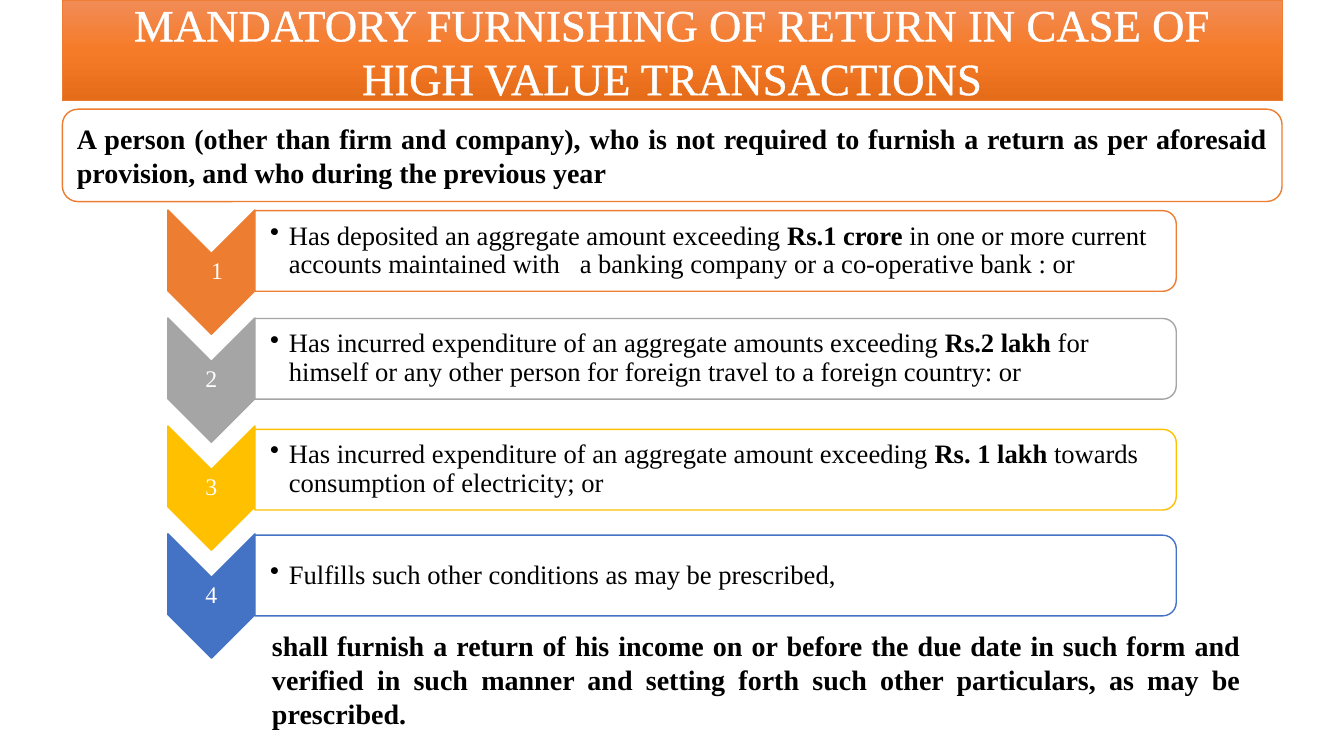
import copy

import pptx
import pptx.dml.color
import pptx.enum.shapes
import pptx.enum.text
import pptx.oxml
import pptx.oxml.ns
import pptx.util
from lxml import etree

Pt = pptx.util.Pt
MSO = pptx.enum.shapes.MSO_SHAPE
ALIGN = pptx.enum.text.PP_ALIGN
ANCHOR = pptx.enum.text.MSO_ANCHOR
qn = pptx.oxml.ns.qn

ORANGE, GREY, GOLD, BLUE = "ED7D31", "A5A5A5", "FFC000", "4472C4"
WHITE, BLACK = "FFFFFF", "000000"

# Each condition: colour, top of its panel, runs of (text, bold)
CONDITIONS = [
    (ORANGE, 150.5, [
        ("Has deposited an aggregate amount exceeding ", False),
        ("Rs.1 crore ", True),
        ("in one or more current accounts maintained with   a banking company "
         "or a co-operative bank : or", False)]),
    (GREY, 227.5, [
        ("Has incurred expenditure of an aggregate amounts exceeding ", False),
        ("Rs.2 lakh ", True),
        ("for himself or any other person for foreign travel to a foreign "
         "country: or", False)]),
    (GOLD, 306.7, [
        ("Has incurred expenditure of an aggregate amount exceeding ", False),
        ("Rs. 1 lakh", True),
        (" towards consumption of electricity; or", False)]),
    (BLUE, 382.3, [
        ("Fulfills such other conditions as may be prescribed,", False)]),
]


def rgb(color):
    return pptx.dml.color.RGBColor.from_string(color)


def add_text(shape, runs, size, color=BLACK, align=ALIGN.LEFT,
             anchor=ANCHOR.MIDDLE, insets=(7.2, 3.6, 7.2, 3.6), spacing=1.0):
    """Fill the shape with one paragraph of (text, bold) runs."""
    tf = shape.text_frame
    tf.word_wrap = True
    tf.vertical_anchor = anchor
    (tf.margin_left, tf.margin_top,
     tf.margin_right, tf.margin_bottom) = map(Pt, insets)
    p = tf.paragraphs[0]
    p.alignment = align
    p.line_spacing = spacing
    for text, bold in runs:
        r = p.add_run()
        r.text = text
        r.font.name = "Times New Roman"
        r.font.size = Pt(size)
        r.font.bold = bold
        r.font.color.rgb = rgb(color)
    return p


def add_box(s, kind, box, fill, line, width=1, turned=False):
    """Draw a preset shape; a turned one is rotated 90° to cover the box."""
    x, y, w, h = box
    if turned:
        x, y, w, h = x + (w - h) / 2, y + (h - w) / 2, h, w
    sp = s.shapes.add_shape(kind, Pt(x), Pt(y), Pt(w), Pt(h))
    sp.rotation = 90 if turned else 0
    sp.shadow.inherit = False
    sp.fill.solid()
    sp.fill.fore_color.rgb = rgb(fill)
    sp.line.color.rgb = rgb(line)
    sp.line.width = Pt(width)
    return sp


def add_textbox(s, x, y, w, h):
    return s.shapes.add_textbox(Pt(x), Pt(y), Pt(w), Pt(h))


def banner(s, box, title):
    sp = add_box(s, MSO.RECTANGLE, box, ORANGE, ORANGE, 0.5)
    sp.fill.gradient()
    sp.fill.gradient_angle = 270
    first = sp.fill._fill._gradFill.gsLst[0]
    first.addnext(copy.deepcopy(first))
    stops = zip(sp.fill.gradient_stops, (0, 0.5, 1),
                ("F18C57", "F67B28", "E56C19"))
    for stop, position, color in stops:
        stop.position = position
        stop.color.rgb = rgb(color)
    p = add_text(sp, [(title, False)], 32, WHITE, ALIGN.CENTER)
    outline = etree.Element(qn("a:ln"), w=str(Pt(1.45)))
    fill = etree.SubElement(outline, qn("a:solidFill"))
    etree.SubElement(fill, qn("a:srgbClr"), val=WHITE)
    p.runs[0].font._element.insert(0, outline)


def introduction(s, box, text):
    sp = add_box(s, MSO.ROUNDED_RECTANGLE, box, WHITE, ORANGE)
    add_text(sp, [(text, True)], 20, align=ALIGN.JUSTIFY)


def number_arrow(s, box, number, color):
    x, y, w, h = box
    add_box(s, MSO.CHEVRON, box, color, color, turned=True)
    label = add_textbox(s, x, y + (h - 26.6) / 2, w, 26.6)
    shift = 9 if number == 1 else 0.7
    add_text(label, [(str(number), False)], 17, WHITE, ALIGN.CENTER,
             insets=(shift, 0.7, 0.7, 0.7), spacing=0.9)


def condition_panel(s, box, runs, color):
    x, y, w, h = box
    sp = add_box(s, MSO.ROUND_2_SAME_RECTANGLE, box, WHITE, color, turned=True)
    white = sp._element.spPr.find(qn("a:solidFill"))[0]
    etree.SubElement(white, qn("a:alpha"), val="90000")
    body = add_textbox(s, x, y + 2.8, w - 2.8, h - 5.6)
    p = add_text(body, runs, 19, insets=(10.8, 0.7, 0.7, 0.7), spacing=0.9)
    p.level = 1
    pPr = p._p.get_or_add_pPr()
    pPr.set("marL", str(Pt(13.5)))
    pPr.set("indent", str(Pt(-13.5)))
    etree.SubElement(pPr, qn("a:buChar"), char="•")


def condition_list(s, box):
    x, y, w, arrow_w, pitch = box
    for i, (color, top, runs) in enumerate(CONDITIONS):
        number_arrow(s, (x, y + i * pitch, arrow_w, 88.8), i + 1, color)
        condition_panel(s, (x + arrow_w, top, w - arrow_w, 57.6), runs, color)


def conclusion(s, box, text):
    add_text(add_textbox(s, *box), [(text, True)], 20,
             align=ALIGN.JUSTIFY, anchor=ANCHOR.TOP)


def main():
    prs = pptx.Presentation()
    prs.slide_width, prs.slide_height = Pt(960), Pt(540)
    s = prs.slides.add_slide(prs.slide_layouts[6])
    banner(s, (44.6, 0, 871.2, 72),
           "MANDATORY FURNISHING OF RETURN IN CASE OF HIGH VALUE TRANSACTIONS")
    introduction(s, (44.6, 78, 871.2, 66),
                 "A person (other than firm and company), who is not required "
                 "to furnish a return as per aforesaid provision, and who "
                 "during the previous year")
    condition_list(s, (119.9, 150, 720.3, 62.2, 77.1))
    conclusion(s, (187.2, 445.7, 706.3, 79.9),
               "shall furnish a return of his income on or before the due "
               "date in such form and verified in such manner and setting "
               "forth such other particulars, as may be prescribed.")
    prs.save("out.pptx")


if __name__ == "__main__":
    main()
